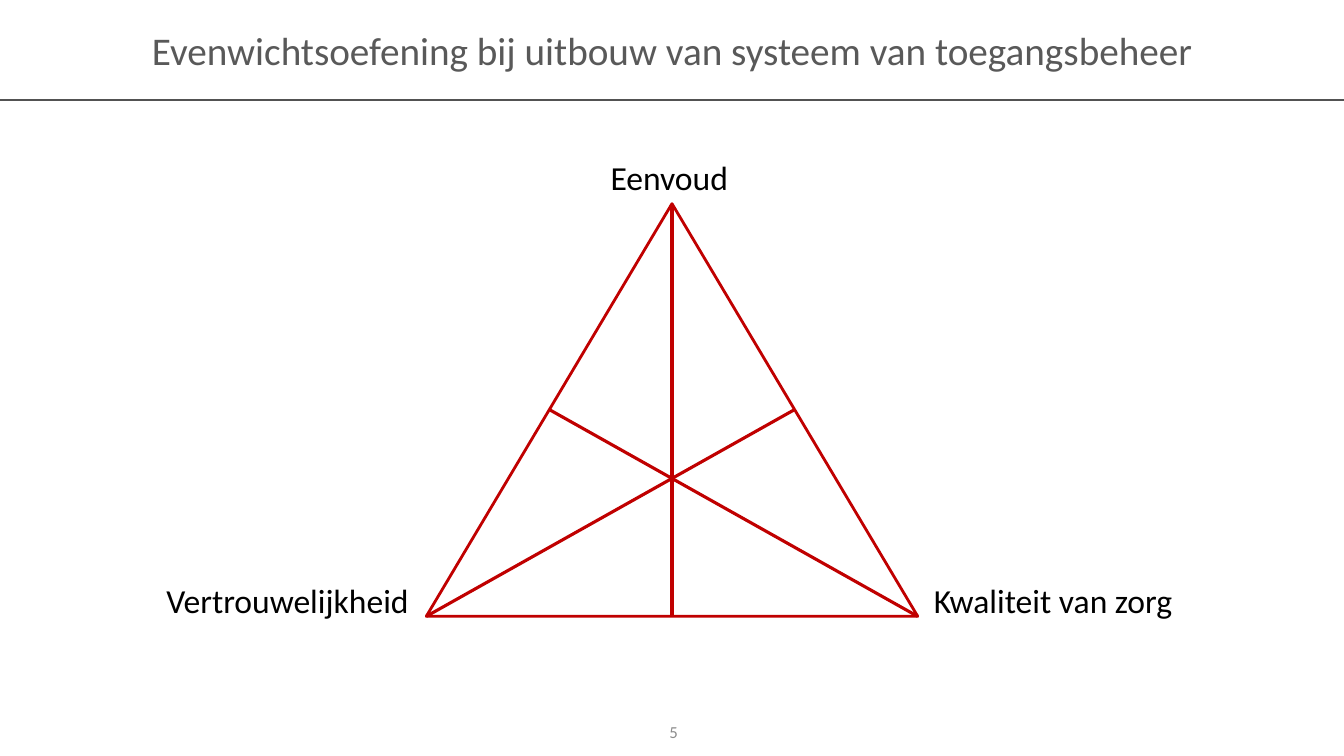
import dataclasses

import pptx
import pptx.dml.color
import pptx.enum.shapes
import pptx.enum.text
import pptx.oxml.ns
import pptx.util
from lxml import etree

ALIGN = pptx.enum.text.PP_ALIGN
ANCHOR = pptx.enum.text.MSO_ANCHOR
FIT = pptx.enum.text.MSO_AUTO_SIZE
EMU_PER_PX = 9525


def px(length):
    return pptx.util.Emu(length * EMU_PER_PX)


@dataclasses.dataclass(frozen=True)
class Theme:
    font: str = "Calibri"
    title_color: str = "595959"
    rule_color: str = "525252"
    number_color: str = "8C8C8C"
    label_color: str = "000000"
    triangle_color: str = "C00000"
    title_size: int = 28
    label_size: int = 24
    number_size: int = 12
    rule_width: float = 1.5
    triangle_width: float = 2
    median_width: float = 2.25


class SlideBuilder:
    def __init__(self, slide, theme):
        self.slide = slide
        self.theme = theme

    def fill_text(self, box, text, size, color, align=ALIGN.LEFT, **frame_format):
        frame = box.text_frame
        for name, value in {"word_wrap": True, **frame_format}.items():
            setattr(frame, name, value)
        para = frame.paragraphs[0]
        para.alignment = align
        span = para.add_run()
        span.text = text
        font_format = {"name": self.theme.font, "size": pptx.util.Pt(size), "bold": False}
        for name, value in font_format.items():
            setattr(span.font, name, value)
        span.font.color.rgb = pptx.dml.color.RGBColor.from_string(color)

    def title(self, text, width, height):
        box = self.slide.shapes.title
        place = {"left": 0, "top": 0, "width": width, "height": height}
        for name, value in place.items():
            setattr(box, name, px(value))
        self.fill_text(box, text, self.theme.title_size, self.theme.title_color,
                       ALIGN.CENTER, vertical_anchor=ANCHOR.MIDDLE, auto_size=FIT.NONE)

    def text(self, text, place, size, color, align=ALIGN.LEFT, **frame_format):
        box = self.slide.shapes.add_textbox(*map(px, place))
        self.fill_text(box, text, size, color, align, **frame_format)

    def outline(self, shape, color, width):
        shape.line.color.rgb = pptx.dml.color.RGBColor.from_string(color)
        shape.line.width = pptx.util.Pt(width)

    def triangle(self, left, top, width, height):
        kind = pptx.enum.shapes.MSO_SHAPE.ISOSCELES_TRIANGLE
        shape = self.slide.shapes.add_shape(kind, *map(px, (left, top, width, height)))
        shape.shadow.inherit = False
        shape.fill.background()
        self.outline(shape, self.theme.triangle_color, self.theme.triangle_width)

    def line(self, start, end, color, width):
        kind = pptx.enum.shapes.MSO_CONNECTOR.STRAIGHT
        line = self.slide.shapes.add_connector(kind, *map(px, (*start, *end)))
        self.outline(line, color, width)
        properties = line._element.find(pptx.oxml.ns.qn("p:spPr"))
        etree.SubElement(properties, pptx.oxml.ns.qn("a:effectLst"))


def midpoint(first, second):
    return tuple((a + b) // 2 for a, b in zip(first, second))


def main():
    theme = Theme()
    deck = pptx.Presentation()
    slide_width, slide_height, header_height = 1280, 720, 95
    deck.slide_width, deck.slide_height = px(slide_width), px(slide_height)
    page = SlideBuilder(deck.slides.add_slide(deck.slide_layouts[5]), theme)

    page.line((0, header_height), (slide_width, header_height),
              theme.rule_color, theme.rule_width)
    page.title("Evenwichtsoefening bij uitbouw van systeem van toegangsbeheer",
               slide_width, header_height)
    page.text("5", (492, 678, 299, 38), theme.number_size, theme.number_color,
              ALIGN.CENTER, vertical_anchor=ANCHOR.MIDDLE)

    left, top, width, height = 406, 194, 468, 393
    page.triangle(left, top, width, height)

    labels = {
        "Eenvoud": (572, 145, 151, 48),
        "Kwaliteit van zorg": (880, 548, 318, 48),
        "Vertrouwelijkheid": (149, 548, 318, 48),
    }
    for text, place in labels.items():
        page.text(text, place, theme.label_size, theme.label_color,
                  auto_size=FIT.SHAPE_TO_FIT_TEXT)

    apex = (left + width // 2, top)
    right_corner = (left + width, top + height)
    left_corner = (left, top + height)
    corners = [apex, right_corner, left_corner]
    for index, corner in enumerate(corners):
        opposite = midpoint(corners[index - 1], corners[index - 2])
        page.line(corner, opposite, theme.triangle_color, theme.median_width)

    deck.save("out.pptx")


if __name__ == "__main__":
    main()
